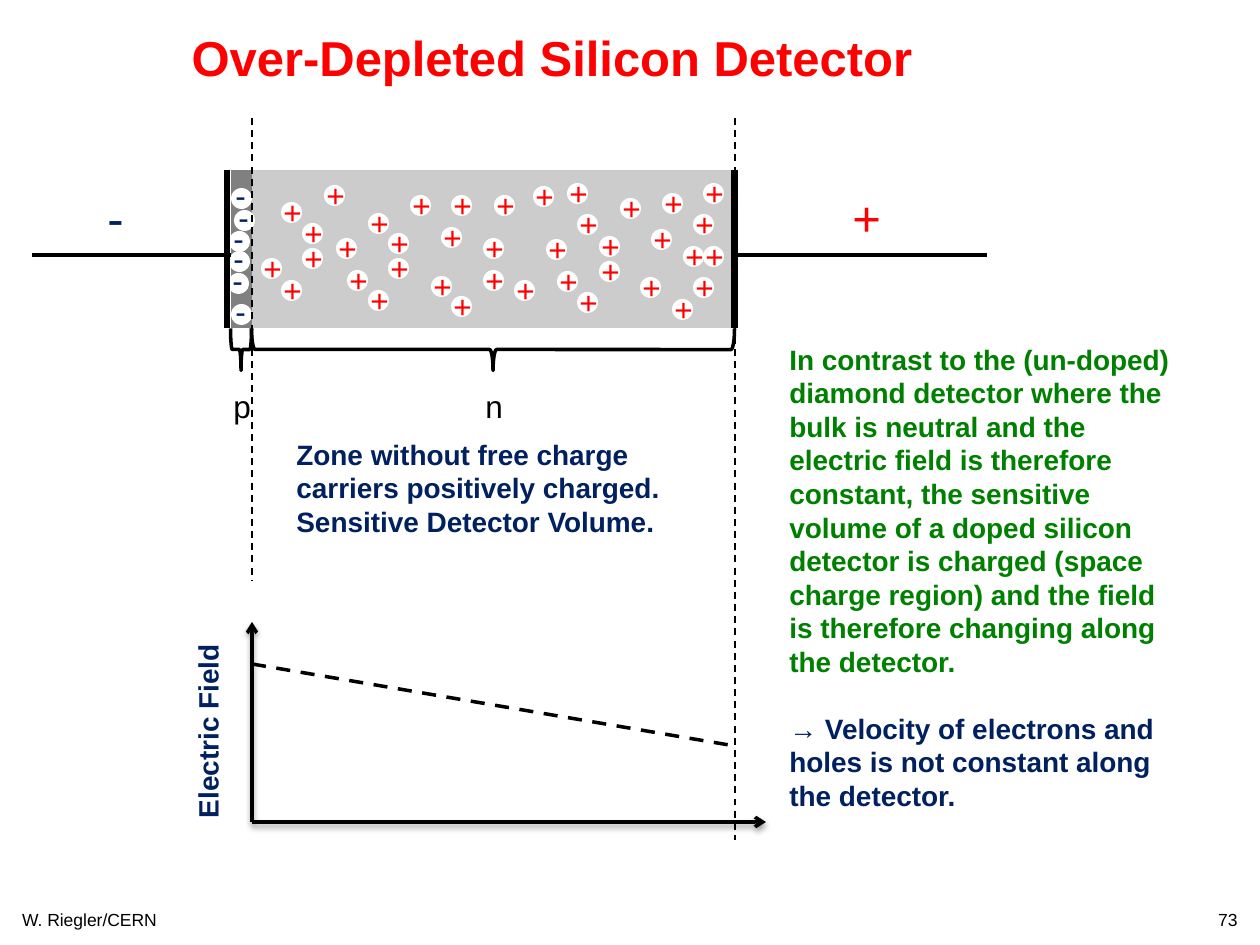
import dataclasses

import lxml.etree
import pptx
import pptx.dml.color
import pptx.enum.dml
import pptx.enum.shapes
import pptx.enum.text
import pptx.oxml
import pptx.oxml.ns
import pptx.util

SCALE = 914400 / 126
SHAPE = pptx.enum.shapes.MSO_SHAPE
ALIGN = pptx.enum.text.PP_ALIGN
QN = pptx.oxml.ns.qn

PLUS = [
    (368, 213), (388, 233), (410, 195), (431, 276), (451, 296), (347, 270),
    (441, 227), (368, 290), (388, 258), (281, 202), (302, 223), (324, 185),
    (451, 195), (261, 258), (336, 238), (281, 280), (302, 248), (483, 238),
    (494, 195), (514, 280), (483, 270), (577, 214), (599, 236), (620, 198),
    (640, 277), (557, 271), (651, 229), (577, 292), (599, 261), (533, 186),
    (546, 239), (662, 193), (683, 246), (672, 299), (693, 214), (703, 246),
    (693, 277), (703, 183), (567, 183),
]
MINUS = [(231, 304), (228, 273), (229, 251), (229, 231), (231, 188), (234, 210)]


@dataclasses.dataclass(frozen=True)
class Theme:
    font: str = "Arial"
    black: str = "000000"
    white: str = "FFFFFF"
    red: str = "FF0000"
    navy: str = "002060"
    green: str = "008000"
    pale: str = "CCCCCC"
    gray: str = "808080"
    head: int = 28
    label: int = 18
    body: int = 16
    foot: int = 10


def px(num):
    return pptx.util.Emu(round(num * SCALE))


def rgb(code):
    return pptx.dml.color.RGBColor.from_string(code)


def put(frame, text, *, font, size, color, bold=False, align=ALIGN.LEFT, gap=0):
    para = frame.add_paragraph() if frame.text else frame.paragraphs[0]
    para.text = text
    para.alignment = align
    if gap:
        para.space_before = pptx.util.Pt(gap)
    style = para.runs[0].font
    style.name, style.size, style.bold = font, pptx.util.Pt(size), bold
    style.color.rgb = rgb(color)


class Deck:
    """Holds the theme and the current slide, and draws each kind of element."""

    def __init__(self, theme):
        self.theme = theme
        self.file = pptx.Presentation()
        self.file.slide_width, self.file.slide_height = px(1260), px(945)
        self.slide = self.file.slides.add_slide(self.file.slide_layouts[5])
        self.shapes = self.slide.shapes

    def title(self, text, x, y, w, h):
        box = self.shapes.title
        box.left, box.top, box.width, box.height = map(px, (x, y, w, h))
        frame = box.text_frame
        frame.auto_size = pptx.enum.text.MSO_AUTO_SIZE.NONE
        frame.vertical_anchor = pptx.enum.text.MSO_ANCHOR.TOP
        put(frame, text, font=self.theme.font, size=self.theme.head,
            color=self.theme.red, bold=True)

    def text(self, text, x, y, w, h, wrap=True, turn=0, home=None, **form):
        box = (home or self.shapes).add_textbox(*map(px, (x, y, w, h)))
        box.rotation = turn
        box.text_frame.word_wrap = wrap
        put(box.text_frame, text, font=self.theme.font, **form)
        return box.text_frame

    def shape(self, kind, x, y, w, h, fill=None, home=None):
        item = (home or self.shapes).add_shape(kind, *map(px, (x, y, w, h)))
        item.shadow.inherit = False
        if fill:
            item.fill.solid()
            item.fill.fore_color.rgb = rgb(fill)
            item.line.fill.background()
        else:
            item.fill.background()
            item.line.color.rgb = rgb(self.theme.black)
            item.line.width = pptx.util.Pt(2)
        return item

    def brace(self, x, y, span, tall):
        mid_x, mid_y = x + span // 2, y + tall // 2
        item = self.shape(SHAPE.RIGHT_BRACE, mid_x - tall // 2,
                          mid_y - span // 2, tall, span)
        item.rotation = 90

    def charge(self, sign, x, y, color, dx, dy, w):
        home = self.shapes.add_group_shape().shapes
        self.shape(SHAPE.OVAL, x, y, 21, 21, self.theme.white, home)
        self.text(sign, x - dx, y - dy, w, 50, wrap=False, home=home,
                  size=self.theme.label, color=color)

    def line(self, x1, y1, x2, y2, width=2, dash=False):
        item = self.shapes.add_connector(
            pptx.enum.shapes.MSO_CONNECTOR.STRAIGHT, *map(px, (x1, y1, x2, y2)))
        item.line.color.rgb = rgb(self.theme.black)
        item.line.width = pptx.util.Pt(width)
        if dash:
            item.line.dash_style = pptx.enum.dml.MSO_LINE.DASH
        lxml.etree.SubElement(item._element.spPr, QN("a:effectLst"))
        return item

    def axis(self, x1, y1, x2, y2):
        item = self.line(x1, y1, x2, y2)
        sub = lxml.etree.SubElement
        sub(item.line._get_or_add_ln(), QN("a:tailEnd"), type="arrow")
        glow = sub(item._element.spPr.find(QN("a:effectLst")), QN("a:outerShdw"),
                   blurRad="40000", dist="20000", dir="5400000", rotWithShape="0")
        tint = sub(glow, QN("a:srgbClr"), val=self.theme.black)
        sub(tint, QN("a:alpha"), val="38000")


def main():
    look = Theme()
    deck = Deck(look)
    left, right, top, tall, mid = 252, 735, 170, 158, 255
    base = top + tall
    bold = dict(size=look.body, bold=True)
    plain = dict(size=look.label, color=look.black, wrap=False)
    foot = dict(size=look.foot, color=look.black)

    deck.title("Over-Depleted Silicon Detector", 179, 21, 903, 72)
    zone = deck.text("Zone without free charge carriers positively charged.",
                     284, 431, 410, 115, color=look.navy, **bold)
    put(zone, "Sensitive Detector Volume.", font=look.font, color=look.navy, **bold)
    deck.text("W. Riegler/CERN", 0, 903, 179, 43, align=ALIGN.CENTER, **foot)
    deck.text("73", 1197, 903, 53, 34, align=ALIGN.RIGHT, **foot)
    deck.text("n", 473, 381, 43, 50, **plain)
    deck.text("p", 221, 381, 43, 50, **plain)

    deck.line(right, mid, 987, mid)
    deck.shape(SHAPE.RECTANGLE, left, top, right - left, tall, look.pale)
    deck.shape(SHAPE.RECTANGLE, 231, top, 21, tall, look.gray)
    for x, y in PLUS:
        deck.charge("+", x, y, look.red, 10, 15, 44)
    for x, y in MINUS:
        deck.charge("-", x, y, look.navy, 8, 18, 36)

    deck.brace(left, base, right - left, 42)
    deck.brace(231, base, 21, 42)
    deck.line(32, mid, 231, mid)
    for x in (right, 227):
        deck.line(x, top, x, base, width=4)
    deck.text("+", 840, 181, 54, 72, wrap=False, size=look.head, color=look.red)
    deck.text("-", 95, 181, 42, 72, wrap=False, size=look.head, color=look.navy)

    for x, end in ((left, 580), (right, 840)):
        deck.line(x, 118, x, end, width=1, dash=True)
    deck.axis(left, 822, 766, 822)
    deck.axis(left, 822, left, 622)
    deck.line(left, 664, right, 746, dash=True)
    deck.text("Electric Field", 107, 706, 202, 47, turn=270, color=look.navy, **bold)

    note = deck.text(
        "In contrast to the (un-doped) diamond detector where the bulk is neutral "
        "and the electric field is therefore constant, the sensitive volume of a "
        "doped silicon detector is charged (space charge region) and the field is "
        "therefore changing along the detector.",
        777, 336, 410, 488, color=look.green, **bold)
    put(note, "→ Velocity of electrons and holes is not constant along the detector.",
        font=look.font, color=look.navy, gap=19, **bold)
    deck.file.save("out.pptx")


if __name__ == "__main__":
    main()
